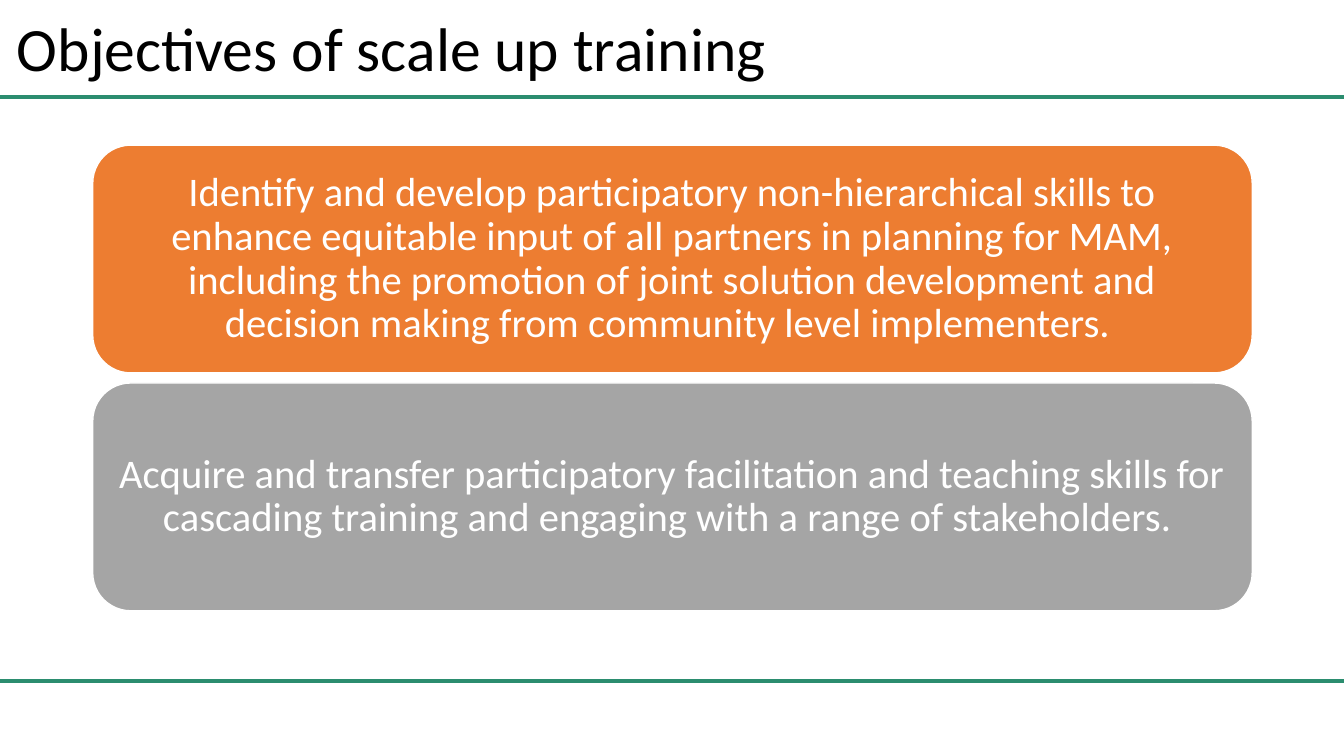
from pptx import Presentation
from pptx.dml.color import RGBColor
from pptx.enum import shapes, text
from pptx.oxml import ns
from pptx.util import Inches, Pt
from lxml import etree

TITLE = "Objectives of scale up training"
OBJECTIVES = [
    ("orange", "Identify and develop participatory non-hierarchical skills to enhance "
     "equitable input of all partners in planning for MAM, including the promotion of "
     "joint solution development and decision making from community level implementers. "),
    ("grey", "Acquire and transfer participatory facilitation and teaching skills for "
     "cascading training and engaging with a range of stakeholders. "),
]
COLOURS = {"green": "2B8D6F", "orange": "ED7D31", "grey": "A5A5A5",
           "white": "FFFFFF", "black": "000000"}
FONT = "Calibri"
WIDTH, HEIGHT = 13.33, 7.5
RULE_TOPS = [0.96, 6.76]
CARD_LEFT, CARD_TOP, CARD_WIDTH, CARD_HEIGHT, CARD_GAP = 0.92, 1.44, 11.5, 2.26, 0.1


def colour(name):
    """Return the named colour."""
    return RGBColor.from_string(COLOURS[name])


def add_rule(page, top):
    """Draw a green line across the page."""
    rule = page.shapes.add_connector(shapes.MSO_CONNECTOR.STRAIGHT, 0, Inches(top),
                                     Inches(WIDTH), Inches(top))
    rule.line.color.rgb = colour("green")
    rule.line.width = Pt(3)
    etree.SubElement(rule._element.spPr, ns.qn("a:effectLst"))


def write(box, words, size, shade, align):
    """Fill a box with one vertically centred paragraph."""
    frame = box.text_frame
    frame.word_wrap = True
    frame.vertical_anchor = text.MSO_ANCHOR.MIDDLE
    para = frame.paragraphs[0]
    para.alignment = align
    para.line_spacing = 0.9
    span = para.add_run()
    span.text = words
    span.font.name = FONT
    span.font.size = Pt(size)
    span.font.color.rgb = colour(shade)


def add_card(page, top, fill, words):
    """Draw a rounded card holding one objective."""
    card = page.shapes.add_shape(shapes.MSO_SHAPE.ROUNDED_RECTANGLE, Inches(CARD_LEFT),
                                 Inches(top), Inches(CARD_WIDTH), Inches(CARD_HEIGHT))
    card.shadow.inherit = False
    card.fill.solid()
    card.fill.fore_color.rgb = colour(fill)
    card.line.color.rgb = colour("white")
    card.line.width = Pt(1)
    frame = card.text_frame
    frame.margin_left = frame.margin_right = Inches(0.12)
    frame.margin_top = frame.margin_bottom = Inches(0.12)
    write(card, words, 29, "white", text.PP_ALIGN.CENTER)


def main():
    """Build and save the slide."""
    deck = Presentation()
    deck.slide_width, deck.slide_height = Inches(WIDTH), Inches(HEIGHT)
    page = deck.slides.add_slide(deck.slide_layouts[6])
    for top in RULE_TOPS:
        add_rule(page, top)
    title = page.shapes.add_textbox(Inches(0.07), Inches(-0.57), Inches(11.5), Inches(2.16))
    write(title, TITLE, 44, "black", text.PP_ALIGN.LEFT)
    for index, (fill, words) in enumerate(OBJECTIVES):
        add_card(page, CARD_TOP + index * (CARD_HEIGHT + CARD_GAP), fill, words)
    deck.save("out.pptx")


if __name__ == "__main__":
    main()
